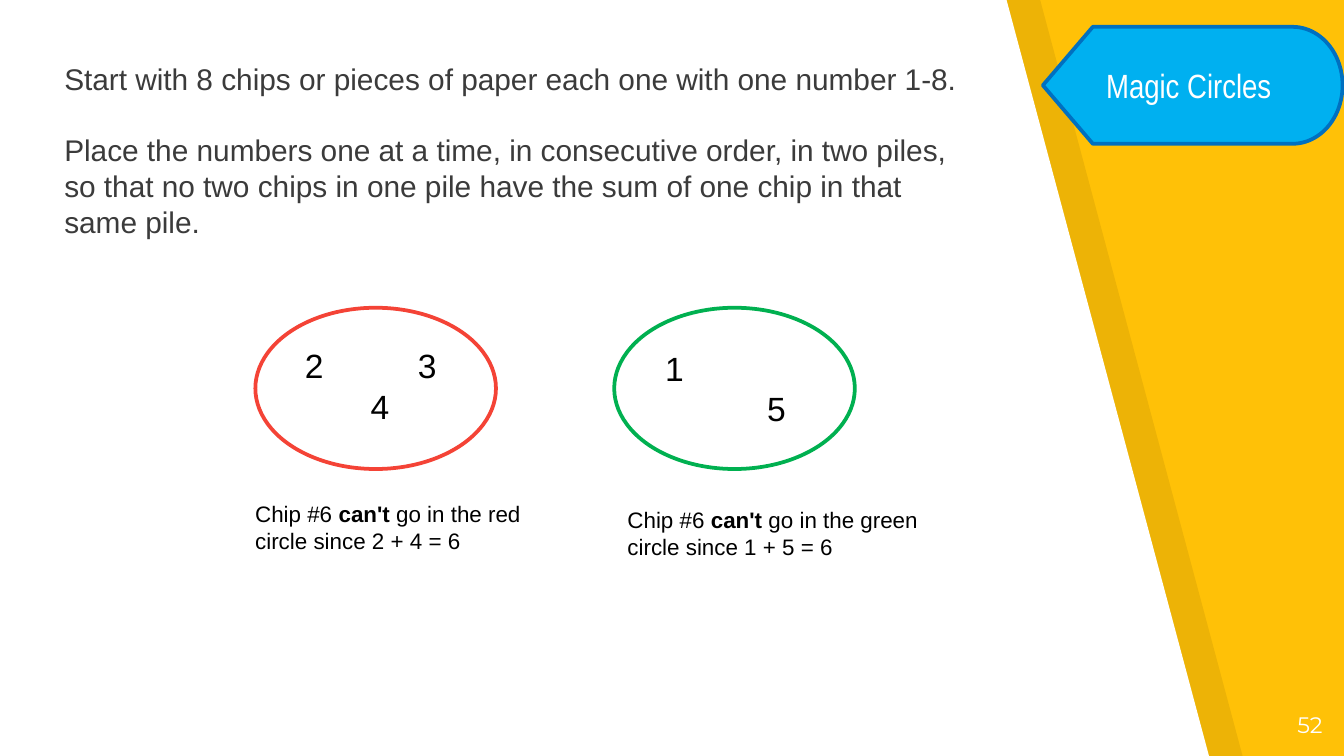
"""Build the Magic Circles slide with its two piles of numbered chips."""
from lxml import etree
from pptx import Presentation
from pptx.dml.color import RGBColor
from pptx.enum.shapes import MSO_SHAPE
from pptx.enum.text import MSO_ANCHOR, MSO_AUTO_SIZE, PP_ALIGN
from pptx.oxml.ns import qn
from pptx.util import Inches, Pt

ELLIPSE = MSO_SHAPE.OVAL
DISPLAY = MSO_SHAPE.FLOWCHART_DISPLAY
MIDDLE = MSO_ANCHOR.MIDDLE
TOP = MSO_ANCHOR.TOP
LEFT = PP_ALIGN.LEFT
RIGHT = PP_ALIGN.RIGHT
NO_AUTOFIT = MSO_AUTO_SIZE.NONE

YELLOW, WHITE, BLACK, GREY = "FFC107", "FFFFFF", "000000", "3B3B3B"
RED, GREEN, SKY, BLUE = "F44336", "00B050", "00B0F0", "0070C0"


def color(value):
    return RGBColor.from_string(value)


class SlideBuilder:
    body_font = "Arial"
    title_font = "Arial Narrow"
    number_font = "Montserrat"
    line_width = 2

    def __init__(self, presentation):
        self.slide = presentation.slides.add_slide(presentation.slide_layouts[5])
        self.shapes = self.slide.shapes

    def background(self, fill):
        self.slide.background.fill.solid()
        self.slide.background.fill.fore_color.rgb = color(fill)

    def panel(self, left, fill, opacity=100):
        corners = [(0, 5.64), (9, 5.64), (7.49, 0)]
        builder = self.shapes.build_freeform(Inches(left), Inches(-0.01))
        builder.add_line_segments([(Inches(left + x), Inches(y)) for x, y in corners])
        shape = builder.convert_to_shape()
        shape.shadow.inherit = False
        shape.fill.solid()
        shape.fill.fore_color.rgb = color(fill)
        shape.line.fill.background()
        if opacity < 100:
            fill_color = shape.element.spPr.find(qn("a:solidFill"))[0]
            etree.SubElement(fill_color, qn("a:alpha")).set("val", str(opacity * 1000))

    def outlined(self, kind, box, fill, line):
        shape = self.shapes.add_shape(kind, *map(Inches, box))
        shape.shadow.inherit = False
        shape.fill.solid()
        shape.fill.fore_color.rgb = color(fill)
        shape.line.color.rgb = color(line)
        shape.line.width = Pt(self.line_width)

    def run(self, paragraph, text, size, font, fill, bold=False):
        run = paragraph.add_run()
        run.text = text
        run.font.size = Pt(size)
        run.font.name = font
        run.font.bold = bold
        run.font.color.rgb = color(fill)

    def title(self, text, box):
        shape = self.shapes.title
        shape.left, shape.top, shape.width, shape.height = map(Inches, box)
        shape.element.getparent().append(shape.element)
        frame = shape.text_frame
        frame.auto_size = NO_AUTOFIT
        frame.vertical_anchor = MIDDLE
        paragraph = frame.paragraphs[0]
        paragraph.alignment = LEFT
        self.run(paragraph, text, 18, self.title_font, WHITE)

    def text(self, box, paragraphs, size, fill=BLACK, font=None, align=LEFT, inset=0.05):
        frame = self.shapes.add_textbox(*map(Inches, box)).text_frame
        frame.word_wrap = True
        frame.vertical_anchor = TOP
        frame.margin_top = frame.margin_bottom = Inches(inset)
        for index, runs in enumerate(paragraphs):
            paragraph = frame.add_paragraph() if index else frame.paragraphs[0]
            paragraph.alignment = align
            for text, bold in runs:
                self.run(paragraph, text, size, font or self.body_font, fill, bold)
        return frame.paragraphs

    def chips(self, left, top, upper, lower, indent, tab=0.84):
        first, second = self.text((left, top, 1.47, 0.71), [[(upper, False)], [(lower, False)]], 18)
        stops = etree.SubElement(first._p.get_or_add_pPr(), qn("a:tabLst"))
        etree.SubElement(stops, qn("a:tab"), pos=str(Inches(tab)), algn="l")
        second._p.get_or_add_pPr().set("marL", str(Inches(indent)))

    def caption(self, box, circle, total):
        runs = [("Chip #6 ", False), ("can't", True),
                (f" go in the {circle} circle since {total} = 6", False)]
        self.text(box, [runs], 12)


def main():
    presentation = Presentation()
    presentation.slide_width = Inches(10)
    presentation.slide_height = Inches(10) * 9 // 16
    builder = SlideBuilder(presentation)

    builder.background(YELLOW)
    builder.panel(0.25, BLACK, opacity=7)
    builder.panel(0, WHITE)
    builder.text((9.34, 5.19, 0.6, 0.43), [[("52", False)]], 12, WHITE,
                 builder.number_font, RIGHT, inset=0.1)

    builder.outlined(DISPLAY, (7.76, 0.2, 2.23, 0.87), SKY, BLUE)
    builder.title("Magic Circles", (8.13, 0.2, 1.49, 0.87))

    for left, line in [(1.9, RED), (4.57, GREEN)]:
        builder.outlined(ELLIPSE, (left, 2.29, 1.79, 1.2), WHITE, line)
    builder.chips(2.17, 2.52, "2\t3", "4", 0.49)
    builder.chips(4.85, 2.54, "1", "5", 0.76)
    builder.caption((1.8, 3.67, 2.22, 0.5), "red", "2 + 4")
    builder.caption((4.57, 3.72, 2.49, 0.5), "green", "1 + 5")

    lines = [
        "Start with 8 chips or pieces of paper each one with one number 1-8.",
        "Place the numbers one at a time, in consecutive order, in two piles,",
        "so that no two chips in one pile have the sum of one chip in that same pile.",
    ]
    instructions = builder.text((0.38, 0.4, 6.99, 1.45), [[(line, False)] for line in lines], 16, GREY)
    instructions[1].space_before = Pt(19)

    presentation.save("out.pptx")


if __name__ == "__main__":
    main()
